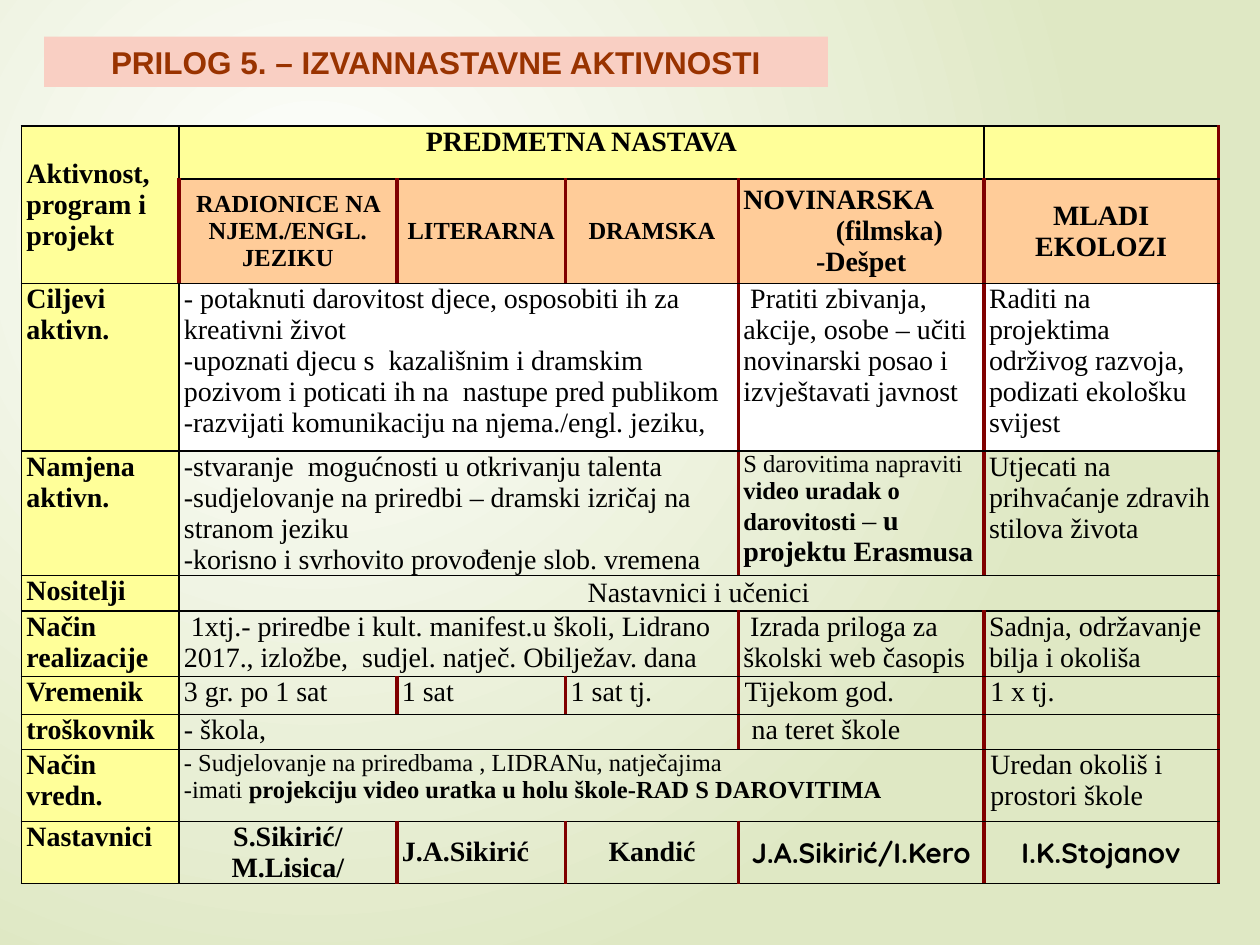
import pptx
import pptx.dml.color
import pptx.enum.shapes
import pptx.enum.text
import pptx.oxml
import pptx.oxml.ns
import pptx.util
from lxml import etree

Inches, Pt = pptx.util.Inches, pptx.util.Pt
ALIGN = pptx.enum.text.PP_ALIGN
ANCHOR = pptx.enum.text.MSO_ANCHOR
qn = pptx.oxml.ns.qn

COLORS = {
    "glow": "FFFFFF", "edge": "DFE8C4",
    "title_fill": "F9CFC3", "title_text": "993300",
    "label": "FFFF99", "header": "FFCC99", "goal": "FFFFFF",
    "text": "000000", "thin": "000000", "thick": "800000",
}
COL_WIDTHS = [1.25, 1.73, 1.34, 1.37, 1.95, 1.86]
ROW_HEIGHTS = [0.42, 0.83, 1.33, 0.99, 0.28, 0.52, 0.3, 0.25, 0.57, 0.49]

CENTER = dict(align=ALIGN.CENTER)
MIDDLE = dict(anchor=ANCHOR.MIDDLE)
BOTH = dict(CENTER, **MIDDLE)
BOLD = dict(bold=True)
HEAD = dict(BOTH, bold=True, fill="header")
SMALL_HEAD = dict(HEAD, size=14)
GOAL = dict(fill="goal")
WIDE = dict(inset=0.05)
SANS = dict(BOTH, bold=True, font="Quicksand", inset=0.05)

# (row, label, rows spanned)
LABELS = [
    (0, "Aktivnost, program i projekt", 2), (2, "Ciljevi aktivn.", 1),
    (3, "Namjena aktivn.", 1), (4, "Nositelji", 1), (5, "Način realizacije", 1),
    (6, "Vremenik", 1), (7, "troškovnik", 1), (8, "Način vredn.", 1),
    (9, "Nastavnici", 1),
]

# One list per row: (columns spanned, paragraphs, format).
# A paragraph is a string or a list of (text, format) runs.
ROWS = [
    [(4, ["PREDMETNA NASTAVA"], dict(CENTER, bold=True, fill="label", left="thin", right="thin")),
     (1, [""], dict(fill="label", left="thin"))],
    [(1, ["RADIONICE NA NJEM./ENGL. JEZIKU"], dict(SMALL_HEAD, left="thick")),
     (1, ["LITERARNA"], SMALL_HEAD),
     (1, ["DRAMSKA"], SMALL_HEAD),
     (1, ["NOVINARSKA", "(filmska)", "-Dešpet"],
      dict(HEAD, aligns=[ALIGN.LEFT, ALIGN.CENTER, ALIGN.CENTER], indents=[0, 0.45, 0])),
     (1, ["MLADI EKOLOZI"], HEAD)],
    [(3, ["- potaknuti darovitost djece, osposobiti ih za kreativni život",
          "-upoznati djecu s  kazališnim i dramskim pozivom i poticati ih na  nastupe pred publikom",
          "-razvijati komunikaciju na njema./engl. jeziku,"], GOAL),
     (1, [" Pratiti zbivanja, akcije, osobe – učiti novinarski posao i izvještavati javnost"], GOAL),
     (1, ["Raditi na projektima održivog razvoja,  podizati ekološku svijest"], GOAL)],
    [(3, ["-stvaranje  mogućnosti u otkrivanju talenta",
          "-sudjelovanje na priredbi – dramski izričaj na stranom jeziku",
          "-korisno i svrhovito provođenje slob. vremena"], {}),
     (1, [[("S darovitima napraviti ", dict(size=14)),
           ("video uradak o darovitosti ", dict(size=14, bold=True)),
           ("– ", {}), ("u projektu Erasmusa", BOLD)]], {}),
     (1, ["Utjecati na prihvaćanje zdravih stilova života"], {})],
    [(5, ["Nastavnici i učenici"], BOTH)],
    [(3, [" 1xtj.- priredbe i kult. manifest.u školi, Lidrano 2017., izložbe,  "
          "sudjel. natječ. Obilježav. dana"], {}),
     (1, [" Izrada priloga za školski web časopis"], {}),
     (1, ["Sadnja, održavanje bilja i okoliša"], {})],
    [(1, ["3 gr. po 1 sat"], {}), (1, ["1 sat"], {}), (1, ["1 sat tj."], {}),
     (1, ["Tijekom god."], WIDE), (1, ["1 x tj."], WIDE)],
    [(3, ["- škola,"], {}), (1, [" na teret škole"], WIDE), (1, [""], {})],
    [(4, ["- Sudjelovanje na priredbama , LIDRANu, natječajima",
          [("-imati ", {}), ("projekciju video uratka u holu škole-RAD S DAROVITIMA", BOLD)]],
      dict(size=14)),
     (1, ["Uredan okoliš i prostori škole"], WIDE)],
    [(1, ["S.Sikirić/ M.Lisica/"], dict(BOTH, bold=True)),
     (1, ["J.A.Sikirić"], dict(MIDDLE, bold=True)),
     (1, ["Kandić"], dict(BOTH, bold=True)),
     (1, ["J.A.Sikirić/I.Kero"], SANS), (1, ["I.K.Stojanov"], SANS)],
]


def rgb(name):
    return pptx.dml.color.RGBColor.from_string(COLORS[name])


def write(tf, paragraphs, align=ALIGN.LEFT, aligns=None, indents=None,
          size=16, bold=False, font="Times New Roman", color="text"):
    tf.word_wrap = True
    for i, runs in enumerate(paragraphs):
        p = tf.paragraphs[0] if i == 0 else tf.add_paragraph()
        p.alignment = aligns[i] if aligns else align
        if indents:
            p._p.get_or_add_pPr().set("marL", str(Inches(indents[i])))
        for text, own in ([(runs, {})] if isinstance(runs, str) else runs):
            r = p.add_run()
            r.text = text
            r.font.size = Pt(own.get("size", size))
            r.font.bold = own.get("bold", bold)
            r.font.name = font
            r.font.color.rgb = rgb(color)


def set_borders(cell, left, right):
    tcPr = cell._tc.get_or_add_tcPr()
    for tag, name in (("lnL", left), ("lnR", right), ("lnT", "thin"), ("lnB", "thin")):
        width = Pt(2.25 if name == "thick" else 1)
        ln = etree.SubElement(tcPr, qn(f"a:{tag}"), w=str(width))
        fill = etree.SubElement(ln, qn("a:solidFill"))
        etree.SubElement(fill, qn("a:srgbClr"), val=COLORS[name])


def fill_cell(table, row, col, paragraphs, rows=1, cols=1, fill=None, inset=0.04,
              anchor=ANCHOR.TOP, left="thick", right="thick", **fmt):
    """Merge, border, fill and write one cell of the table."""
    cell = table.cell(row, col)
    if rows * cols > 1:
        cell.merge(table.cell(row + rows - 1, col + cols - 1))
    for r in range(row, row + rows):
        for c in range(col, col + cols):
            set_borders(table.cell(r, c), left, right)
    if fill:
        cell.fill.solid()
        cell.fill.fore_color.rgb = rgb(fill)
    else:
        cell.fill.background()
    cell.margin_left = cell.margin_right = Inches(inset)
    cell.margin_top = cell.margin_bottom = 0
    cell.vertical_anchor = anchor
    write(cell.text_frame, paragraphs, **fmt)


def add_activity_table(s, left, top):
    frame = s.shapes.add_table(len(ROW_HEIGHTS), len(COL_WIDTHS), Inches(left), Inches(top),
                               Inches(sum(COL_WIDTHS)), Inches(sum(ROW_HEIGHTS)))
    table = frame.table
    table.first_row = table.horz_banding = False
    for column, width in zip(table.columns, COL_WIDTHS):
        column.width = Inches(width)
    for row, height in zip(table.rows, ROW_HEIGHTS):
        row.height = Inches(height)
    for row, text, rows in LABELS:
        fill_cell(table, row, 0, [text], rows=rows, fill="label", left="thin", right="thin",
                  bold=True, anchor=ANCHOR.MIDDLE if rows > 1 else ANCHOR.TOP)
    for row, cells in enumerate(ROWS):
        col = 1
        for cols, paragraphs, fmt in cells:
            edge = dict(left="thin" if col == 1 else "thick")
            fill_cell(table, row, col, paragraphs, cols=cols, **{**edge, **fmt})
            col += cols


def add_title(s, left, top, width, height):
    sp = s.shapes.add_shape(pptx.enum.shapes.MSO_SHAPE.RECTANGLE, Inches(left), Inches(top),
                            Inches(width), Inches(height))
    sp.shadow.inherit = False
    sp.fill.solid()
    sp.fill.fore_color.rgb = rgb("title_fill")
    sp.line.fill.background()
    write(sp.text_frame, ["PRILOG 5. – IZVANNASTAVNE AKTIVNOSTI"], align=ALIGN.CENTER,
          size=18, bold=True, font="Arial", color="title_text")


def set_background(s):
    """Radial gradient, light at the upper left."""
    fill = s.background.fill
    fill.gradient()
    for stop, name, position in zip(fill.gradient_stops, ("glow", "edge"), (0, 1)):
        stop.color.rgb = rgb(name)
        stop.position = position
    grad = s.element.find(".//" + qn("a:gradFill"))
    grad.remove(grad.find(qn("a:lin")))
    circle = etree.SubElement(grad, qn("a:path"), {"path": "circle"})
    etree.SubElement(circle, qn("a:fillToRect"), l="50000", t="50000", r="100000", b="100000")


def main():
    prs = pptx.Presentation()
    prs.slide_width, prs.slide_height = Inches(10), Inches(7.5)
    s = prs.slides.add_slide(prs.slide_layouts[6])
    set_background(s)
    add_activity_table(s, 0.17, 1)
    add_title(s, 0.35, 0.29, 6.22, 0.4)
    prs.save("out.pptx")


if __name__ == "__main__":
    main()
